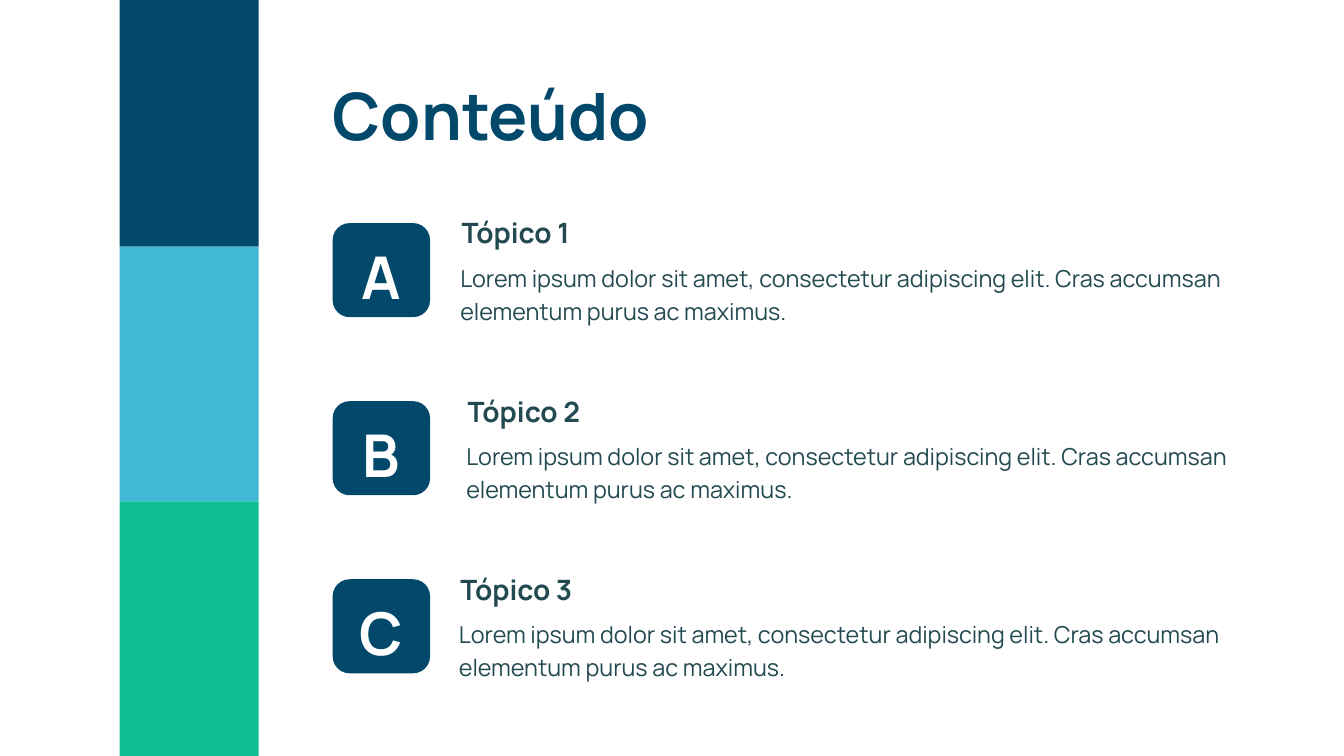
from dataclasses import dataclass

from pptx import Presentation
from pptx.dml.color import RGBColor
from pptx.enum.shapes import MSO_SHAPE
from pptx.enum.text import MSO_ANCHOR, MSO_AUTO_SIZE, PP_ALIGN
from pptx.shapes.autoshape import Shape
from pptx.slide import Slide
from pptx.util import Emu, Pt

PX = 9144
NAVY, SKY, GREEN, SLATE, WHITE = "01486B", "41B8D5", "0EBF95", "224A50", "FFFFFF"
BADGE_LEFT, BADGE_WIDTH, BADGE_HEIGHT = 495, 145, 140
FIRST_BADGE_TOP, TOPIC_STEP = 332, 265
SUMMARY = (
    "Lorem ipsum dolor sit amet, consectetur adipiscing elit. "
    "Cras accumsan elementum purus ac maximus."
)


@dataclass(frozen=True)
class Box:
    left: int
    top: int
    width: int
    height: int

    def emu(self) -> tuple[Emu, ...]:
        return tuple(Emu(n * PX) for n in (self.left, self.top, self.width, self.height))


@dataclass(frozen=True)
class TextStyle:
    size: float
    leading: float
    color: str
    bold: bool = True
    align: PP_ALIGN = PP_ALIGN.LEFT
    anchor: MSO_ANCHOR = MSO_ANCHOR.TOP


@dataclass(frozen=True)
class Topic:
    letter: str
    heading: str
    text_left: int


@dataclass(frozen=True)
class Band:
    color: str
    top: int
    bottom: int


TITLE = TextStyle(70, 98, NAVY)
LETTER = TextStyle(63.1, 88.4, WHITE, align=PP_ALIGN.CENTER, anchor=MSO_ANCHOR.MIDDLE)
HEADING = TextStyle(30, 42, SLATE)
BODY = TextStyle(25, 35, SLATE, bold=False)

BANDS = (Band(NAVY, 0, 367), Band(SKY, 367, 746), Band(GREEN, 746, 1125))
TOPICS = (
    Topic("A", "Tópico 1", 685),
    Topic("B", "Tópico 2", 694),
    Topic("C", "Tópico 3", 683),
)


def rgb(color: str) -> RGBColor:
    return RGBColor.from_string(color)


def apply(target: object, values: dict[str, object]) -> None:
    for name, value in values.items():
        setattr(target, name, value)


def write(holder: Shape, text: str, style: TextStyle) -> None:
    frame = holder.text_frame
    apply(frame, {
        "margin_left": 0, "margin_top": 0, "margin_right": 0, "margin_bottom": 0,
        "word_wrap": True, "auto_size": MSO_AUTO_SIZE.NONE,
        "vertical_anchor": style.anchor,
    })
    paragraph = frame.paragraphs[0]
    apply(paragraph, {
        "alignment": style.align, "line_spacing": Pt(style.leading),
        "space_before": Pt(0), "space_after": Pt(0),
    })
    run = paragraph.add_run()
    run.text = text
    apply(run.font, {"name": "Manrope", "size": Pt(style.size), "bold": style.bold})
    run.font.color.rgb = rgb(style.color)


def add_block(slide: Slide, kind: MSO_SHAPE, box: Box, color: str) -> Shape:
    block = slide.shapes.add_shape(kind, *box.emu())
    block.shadow.inherit = False
    block.fill.solid()
    block.fill.fore_color.rgb = rgb(color)
    block.line.fill.background()
    return block


def add_text(slide: Slide, box: Box, text: str, style: TextStyle) -> None:
    write(slide.shapes.add_textbox(*box.emu()), text, style)


def add_topic(slide: Slide, topic: Topic, top: int) -> None:
    badge = add_block(slide, MSO_SHAPE.ROUNDED_RECTANGLE,
                      Box(BADGE_LEFT, top, BADGE_WIDTH, BADGE_HEIGHT), NAVY)
    badge.adjustments[0] = 0.18
    write(badge, topic.letter, LETTER)
    add_text(slide, Box(topic.text_left + 2, top - 19, 586, 59), topic.heading, HEADING)
    add_text(slide, Box(topic.text_left, top + 54, 1194, 96), SUMMARY, BODY)


def place_title(slide: Slide, box: Box, text: str) -> None:
    title = slide.shapes.title
    apply(title, dict(zip(("left", "top", "width", "height"), box.emu())))
    write(title, text, TITLE)


def main() -> None:
    deck = Presentation()
    apply(deck, {"slide_width": Emu(2000 * PX), "slide_height": Emu(1125 * PX)})
    slide = deck.slides.add_slide(deck.slide_layouts[5])
    place_title(slide, Box(BADGE_LEFT, 92, 494, 137), "Conteúdo")
    for band in BANDS:
        add_block(slide, MSO_SHAPE.RECTANGLE,
                  Box(178, band.top, 207, band.bottom - band.top), band.color)
    for index, topic in enumerate(TOPICS):
        add_topic(slide, topic, FIRST_BADGE_TOP + index * TOPIC_STEP)
    deck.save("out.pptx")


if __name__ == "__main__":
    main()
